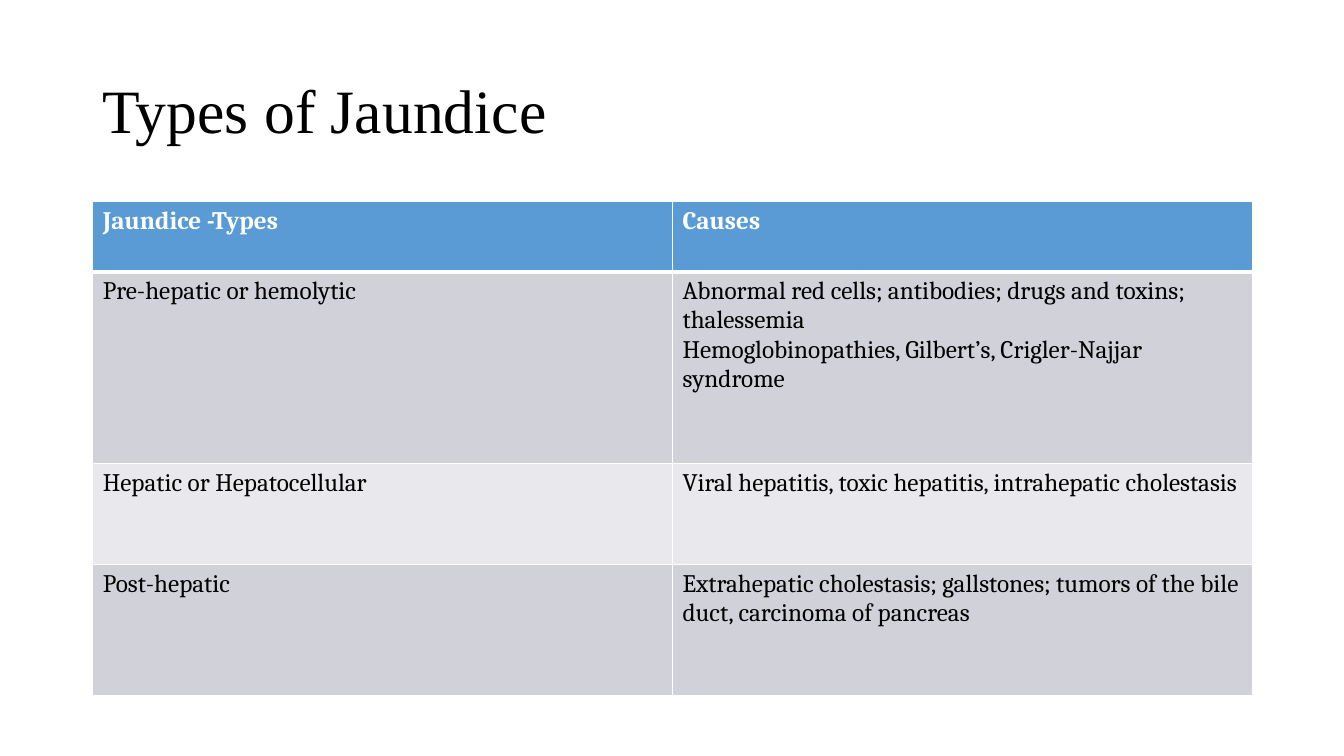
from lxml import etree
from pptx import Presentation
from pptx.dml.color import RGBColor
from pptx.enum.text import MSO_ANCHOR
from pptx.oxml.ns import qn
from pptx.util import Inches, Pt

MIDDLE = MSO_ANCHOR.MIDDLE
WHITE, BLACK, BLUE = "FFFFFF", "000000", "5B9BD5"
BANDS = ["E9E9ED", "D1D1DA"]
LEFT, WIDTH = Inches(0.92), Inches(11.5)
ROW_HEIGHTS = [0.7, 1.9, 1, 1.3]
JAUNDICE_TYPES = [
    ("Jaundice -Types", "Causes"),
    ("Pre-hepatic or hemolytic",
     "Abnormal red cells; antibodies; drugs and toxins; thalessemia\n"
     "Hemoglobinopathies, Gilbert’s, Crigler-Najjar syndrome"),
    ("Hepatic or Hepatocellular",
     "Viral hepatitis, toxic hepatitis, intrahepatic cholestasis"),
    ("Post-hepatic",
     "Extrahepatic cholestasis; gallstones; tumors of the bile duct, "
     "carcinoma of pancreas"),
]


def write(frame, text, size=18, font="Cambria", color=BLACK, bold=False, spacing=None):
    frame.word_wrap = True
    frame.text = text
    for paragraph in frame.paragraphs:
        paragraph.line_spacing = spacing
        for run in paragraph.runs:
            run.font.size = Pt(size)
            run.font.name = font
            run.font.bold = bold
            run.font.color.rgb = RGBColor.from_string(color)


def add_borders(cell, top, bottom):
    """Draw white cell edges; top and bottom are widths in points."""
    properties = cell._tc.get_or_add_tcPr()
    edges = [("a:lnL", 1), ("a:lnR", 1), ("a:lnT", top), ("a:lnB", bottom)]
    for position, (tag, width) in enumerate(edges):
        line = etree.Element(qn(tag), w=str(Pt(width)))
        fill = etree.SubElement(line, qn("a:solidFill"))
        etree.SubElement(fill, qn("a:srgbClr"), val=WHITE)
        properties.insert(position, line)


prs = Presentation()
prs.slide_width, prs.slide_height = Inches(13.33), Inches(7.5)
slide = prs.slides.add_slide(prs.slide_layouts[6])

title = slide.shapes.add_textbox(LEFT, Inches(0.4), WIDTH, Inches(1.45)).text_frame
title.vertical_anchor = MIDDLE
write(title, "Types of Jaundice", size=44, font="Times New Roman", spacing=0.9)

causes_table = slide.shapes.add_table(
    len(JAUNDICE_TYPES), 2, LEFT, Inches(2), WIDTH, Inches(sum(ROW_HEIGHTS))).table
for r, (height, texts) in enumerate(zip(ROW_HEIGHTS, JAUNDICE_TYPES)):
    causes_table.rows[r].height = Inches(height)
    header = r == 0
    for c, text in enumerate(texts):
        cell = causes_table.cell(r, c)
        cell.fill.solid()
        cell.fill.fore_color.rgb = RGBColor.from_string(BLUE if header else BANDS[r % 2])
        add_borders(cell, top=3 if r == 1 else 1, bottom=3 if header else 1)
        write(cell.text_frame, text, color=WHITE if header else BLACK, bold=header)

prs.save("out.pptx")
